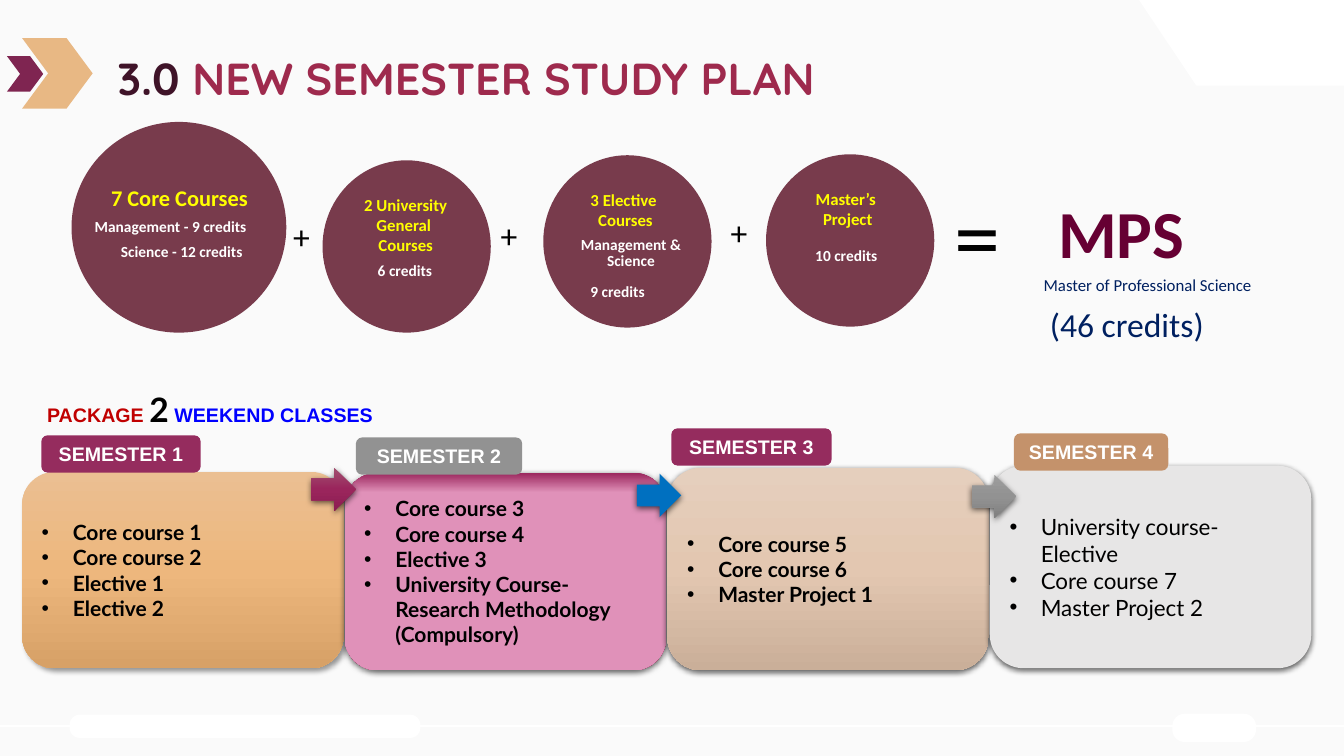
"""Build the semester study plan slide."""
from lxml.etree import SubElement
from pptx import Presentation
from pptx.dml.color import RGBColor
from pptx.enum.shapes import MSO_CONNECTOR, MSO_SHAPE
from pptx.enum.text import MSO_ANCHOR, PP_ALIGN
from pptx.oxml.ns import qn
from pptx.util import Pt

COLORS = {
    "page": "FAFAFA", "white": "FFFFFF", "black": "000000", "yellow": "FFFF00",
    "plum": "7F2551", "sand": "E8B884", "wine": "3F1328", "rose": "9E2A4D",
    "circle": "621A2E", "berry": "952C5E", "gray": "929292", "tan": "C4926B",
    "blue": "0070C0", "silver": "E7E6E6", "red": "C00000", "bright": "0000FF",
    "navy": "002060", "maroon": "660033",
}
GRADIENTS = {
    "orange": [(0, "EBBF92"), (50, "EDB77D"), (100, "D7A167")],
    "pink": [(0, "9A255C"), (10, "E091B9"), (100, "E091B9")],
    "beige": [(0, "E5CFBD"), (50, "E3C7B1"), (100, "CAAF99")],
    "crimson": [(0, "A15070"), (50, "9A255C"), (100, "8C1C52")],
    "steel": [(0, "9D9D9D"), (50, "929292"), (100, "808080")],
}
SOFT_SHADOW = (40, 4, 3, 45)
DROP_SHADOW = (63, 4.5, 1.5, 90)


def rgb(name):
    return RGBColor.from_string(COLORS[name])


def write(frame, text, size=11, color="black", font="Calibri", bold=False,
          align=PP_ALIGN.LEFT, joined=False, bullet=False, indent=0,
          before=0, spacing=None):
    for line in text.split("\n"):
        fresh = bool(frame.text) and not joined
        paragraph = frame.add_paragraph() if fresh else frame.paragraphs[-1]
        paragraph.alignment = align
        if before:
            paragraph.space_before = Pt(before)
        if spacing:
            paragraph.line_spacing = spacing
        properties = paragraph._p.get_or_add_pPr()
        if indent:
            properties.set("marL", str(Pt(indent)))
        if bullet:
            properties.set("indent", str(-Pt(indent)))
            SubElement(properties, qn("a:buFont"), typeface="Arial")
            SubElement(properties, qn("a:buChar"), char="•")
        run = paragraph.add_run()
        run.text = line
        run.font.size, run.font.name, run.font.bold = Pt(size), font, bold
        run.font.color.rgb = rgb(color)


class StudyPlan:
    def __init__(self, slide):
        self.slide = slide
        self.shapes = slide.shapes
        slide.background.fill.solid()
        slide.background.fill.fore_color.rgb = rgb("page")

    def paint(self, shape, fill, alpha=None, shadow=None):
        shape.shadow.inherit = False
        shape.line.fill.background()
        properties = shape.element.spPr
        if fill in GRADIENTS:
            shape.fill.gradient()
            shape.fill.gradient_angle = 270
            stops = properties.find(qn("a:gradFill")).find(qn("a:gsLst"))
            for stop in list(stops):
                stops.remove(stop)
            for place, color in GRADIENTS[fill]:
                stop = SubElement(stops, qn("a:gs"), pos=str(place * 1000))
                SubElement(stop, qn("a:srgbClr"), val=color)
        else:
            shape.fill.solid()
            shape.fill.fore_color.rgb = rgb(fill)
        if alpha:
            color = properties.find(qn("a:solidFill")).find(qn("a:srgbClr"))
            SubElement(color, qn("a:alpha"), val=str(alpha * 1000))
        if shadow:
            opacity, blur, distance, angle = shadow
            outer = SubElement(
                properties.find(qn("a:effectLst")), qn("a:outerShdw"),
                blurRad=str(Pt(blur)), dist=str(Pt(distance)),
                dir=str(angle * 60000), algn="ctr", rotWithShape="0")
            tint = SubElement(outer, qn("a:srgbClr"), val=COLORS["black"])
            SubElement(tint, qn("a:alpha"), val=str(opacity * 1000))
        return shape

    def preset(self, kind, place, fill, adjust=None, **style):
        shape = self.shapes.add_shape(kind, *map(Pt, place))
        if adjust:
            shape.adjustments[0] = adjust
        shape.text_frame.word_wrap = True
        shape.text_frame.vertical_anchor = MSO_ANCHOR.MIDDLE
        return self.paint(shape, fill, **style)

    def outline(self, points, fill):
        (x, y), *rest = [tuple(map(Pt, point)) for point in points]
        builder = self.shapes.build_freeform(x, y)
        builder.add_line_segments(rest)
        self.paint(builder.convert_to_shape(), fill)

    def rule(self, y, color, width):
        line = self.shapes.add_connector(
            MSO_CONNECTOR.STRAIGHT, 0, Pt(y), Pt(960), Pt(y))
        line.line.color.rgb = rgb(color)
        line.line.width = Pt(width)
        SubElement(line.element.spPr, qn("a:effectLst"))

    def label(self, place, text, wrap=True, **style):
        frame = self.shapes.add_textbox(*map(Pt, place)).text_frame
        frame.word_wrap = wrap
        write(frame, text, **style)
        return frame


def draw_frame(plan):
    plan.preset(MSO_SHAPE.ROUNDED_RECTANGLE, (49.7, 510.5, 250.6, 16.6), "white", 0.44)
    plan.rule(518.4, "white", 1.5)
    plan.preset(MSO_SHAPE.ROUNDED_RECTANGLE, (837.4, 509.8, 59.8, 20.2), "white", 0.44)
    plan.outline([(813.6, 0), (960, 0), (960, 61.2), (854.6, 61.2), (813.6, 0)], "white")
    plan.preset(MSO_SHAPE.CHEVRON, (5, 40.1, 25.9, 25.4), "plum", 0.37)
    plan.preset(MSO_SHAPE.CHEVRON, (15.8, 27.2, 50.4, 50.4), "sand", 0.37)
    heading = dict(size=32, font="Quicksand", bold=True, align=PP_ALIGN.CENTER)
    title = plan.label((-35.3, 32.4, 745.9, 46.1), "3.0 ", color="wine", **heading)
    write(title, "NEW SEMESTER STUDY PLAN ", color="rose", joined=True, **heading)


def draw_semesters(plan):
    semesters = [
        (337, 140.4, "orange", SOFT_SHADOW, (29.5, 311, 113.8), "berry",
         "Core course 1\nCore course 2\nElective 1\nElective 2"),
        (337.7, 141.1, "pink", DROP_SHADOW, (254.2, 312.5, 118.8), "gray",
         "Core course 3\nCore course 4\nElective 3\n"
         "University Course-Research Methodology (Compulsory)"),
        (334.1, 144.7, "beige", DROP_SHADOW, (479.5, 306, 114.5), "berry",
         "Core course 5\nCore course 6\nMaster Project 1"),
        (332.6, 144.7, "silver", DROP_SHADOW, (724.3, 309.6, 110.2), "tan",
         "University course-Elective\nCore course 7\nMaster Project 2"),
    ]
    for index, (top, height, fill, shadow, tab, tab_fill, courses) in enumerate(semesters):
        card = plan.preset(MSO_SHAPE.ROUNDED_RECTANGLE,
                           (15.8 + 230.4 * index, top, 229.7, height), fill, shadow=shadow)
        final = index == len(semesters) - 1
        write(card.text_frame, courses, size=16 if final else 15, font="Lato",
              bold=not final, bullet=True, indent=22.3)
        heading = plan.preset(MSO_SHAPE.ROUNDED_RECTANGLE, (*tab, 26.6), tab_fill)
        write(heading.text_frame, f"SEMESTER {index + 1}", size=14, font="Arial",
              color="white", bold=True, align=PP_ALIGN.CENTER)
    for left, top, fill in [(222.5, 334.1, "crimson"), (455, 338.4, "blue"),
                            (694.1, 339.1, "steel")]:
        plan.preset(MSO_SHAPE.RIGHT_ARROW, (left, top, 31.7, 31), fill, shadow=DROP_SHADOW)
    package = plan.label((26.6, 272.2, 362.2, 40.3), "PACKAGE ", size=14,
                         font="Arial", color="red", bold=True)
    package.vertical_anchor = MSO_ANCHOR.MIDDLE
    write(package, "2", size=24, font="Lato", bold=True, joined=True)
    write(package, " WEEKEND CLASSES", size=14, font="Arial", color="bright",
          bold=True, joined=True)


def draw_credits(plan):
    for place in [(51.1, 87.1, 153.4, 150.5), (230.4, 114.5, 120.2, 123.1),
                  (388.1, 110.9, 120.2, 123.1), (547.2, 110.2, 120.2, 123.1)]:
        plan.preset(MSO_SHAPE.OVAL, place, "circle", alpha=85)
    for place, text, size in [
            ((71.3, 128.2, 113.8, 26.6), "7 Core Courses", 16),
            ((252.7, 135.4, 74.2, 51.1), "2 University\nGeneral \nCourses", 12),
            ((414, 131.8, 65.5, 36), "3 Elective \nCourses", 12),
            ((575.3, 131, 60.5, 36), "Master’s \nProject", 12)]:
        plan.label(place, text, wrap=False, size=size, color="yellow", bold=True,
                   align=PP_ALIGN.CENTER)
    detail = dict(color="white", bold=True)
    plan.label((60.5, 151.2, 162, 20.9), "Management - 9 credits", **detail)
    plan.label((79.2, 169.2, 162, 20.9), "Science - 12 credits", **detail)
    amount = dict(detail, indent=10, spacing=0.9)
    plan.label((252.7, 184.3, 92.2, 19.4), "6 credits", **amount)
    plan.label((565.2, 173.5, 92.2, 19.4), "10 credits", **amount)
    elective = plan.label((404.6, 165.6, 92.2, 53.3), "Management & Science",
                          align=PP_ALIGN.CENTER, spacing=0.9, **detail)
    write(elective, "9 credits", before=10, **amount)
    for left, top in [(202.3, 150.5), (350.6, 149.8), (514.8, 147.6)]:
        plan.label((left, top, 46.1, 36), "+", size=24)
    plan.label((674.6, 123.8, 46.1, 87.1), "=", size=66)
    for place, text, size, color in [
            ((748.1, 133.2, 105.8, 65.5), "MPS", 48, "maroon"),
            ((737.3, 193, 164.9, 21.6), "Master of Professional Science", 12, "navy"),
            ((742.3, 213.8, 125.3, 36), "(46 credits)", 24, "navy")]:
        plan.label(place, text, wrap=False, size=size, color=color,
                   bold=text == "MPS", align=PP_ALIGN.CENTER)


def main():
    deck = Presentation()
    deck.slide_width, deck.slide_height = Pt(960), Pt(540)
    plan = StudyPlan(deck.slides.add_slide(deck.slide_layouts[6]))
    draw_frame(plan)
    draw_semesters(plan)
    draw_credits(plan)
    deck.save("out.pptx")


if __name__ == "__main__":
    main()
